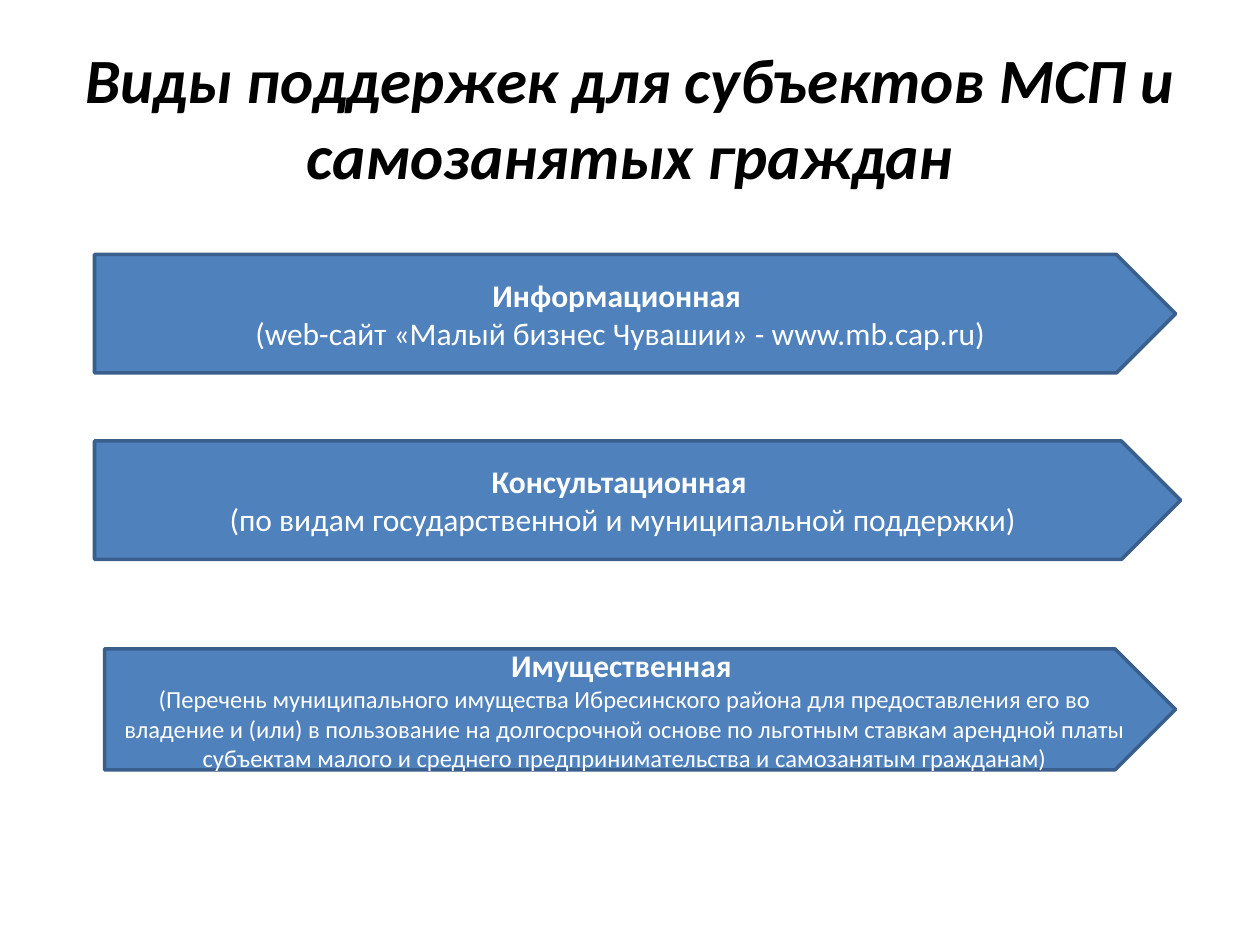
from dataclasses import dataclass

from pptx import Presentation
from pptx.dml.color import RGBColor
from pptx.enum.shapes import MSO_SHAPE
from pptx.enum.text import MSO_ANCHOR, PP_ALIGN
from pptx.text.text import TextFrame
from pptx.util import Emu, Pt

PX = 9144
FONT = "Calibri"
BLACK = RGBColor(0x00, 0x00, 0x00)
WHITE = RGBColor(0xFF, 0xFF, 0xFF)
BLUE = RGBColor(0x4F, 0x81, 0xBD)
NAVY = RGBColor(0x3A, 0x5F, 0x8C)
ARROW = MSO_SHAPE.PENTAGON
MIDDLE = MSO_ANCHOR.MIDDLE
CENTER = PP_ALIGN.CENTER


@dataclass(frozen=True)
class Box:
    left: int
    top: int
    width: int
    height: int

    def emu(self) -> list[Emu]:
        return [Emu(n * PX) for n in (self.left, self.top, self.width, self.height)]


@dataclass(frozen=True)
class Line:
    text: str
    size: int = 18
    bold: bool = False
    italic: bool = False


@dataclass(frozen=True)
class Banner:
    box: Box
    head: str
    note: str
    size: int = 18


TITLE = Line("Виды поддержек для субъектов МСП и самозанятых граждан", 36, True, True)
BANNERS = [
    Banner(Box(75, 202, 858, 94), "Информационная ",
           "(web-сайт «Малый бизнес Чувашии» - www.mb.cap.ru)"),
    Banner(Box(75, 350, 862, 94), "Консультационная ",
           "(по видам государственной и муниципальной поддержки)"),
    Banner(Box(83, 515, 850, 96), "Имущественная ",
           "(Перечень муниципального имущества Ибресинского района для "
           "предоставления его во владение и (или) в пользование на "
           "долгосрочной основе по льготным ставкам арендной платы субъектам "
           "малого и среднего предпринимательства и самозанятым гражданам)", 14),
]


def write(frame: TextFrame, lines: list[Line], color: RGBColor) -> None:
    frame.word_wrap = True
    frame.vertical_anchor = MIDDLE
    for i, line in enumerate(lines):
        para = frame.add_paragraph() if i else frame.paragraphs[0]
        para.alignment = CENTER
        run = para.add_run()
        run.text = line.text
        font = run.font
        font.name = FONT
        font.size = Pt(line.size)
        font.bold = line.bold
        font.italic = line.italic
        font.color.rgb = color


def draw(shapes, banner: Banner) -> None:
    shape = shapes.add_shape(ARROW, *banner.box.emu())
    shape.shadow.inherit = False
    shape.fill.solid()
    shape.fill.fore_color.rgb = BLUE
    shape.line.color.rgb = NAVY
    shape.line.width = Pt(2)
    lines = [Line(banner.head, bold=True), Line(banner.note, banner.size)]
    write(shape.text_frame, lines, WHITE)


def main() -> None:
    deck = Presentation()
    deck.slide_width = Emu(1000 * PX)
    deck.slide_height = Emu(750 * PX)
    shapes = deck.slides.add_slide(deck.slide_layouts[6]).shapes
    title = shapes.add_textbox(*Box(50, 30, 900, 125).emu())
    write(title.text_frame, [TITLE], BLACK)
    for banner in BANNERS:
        draw(shapes, banner)
    deck.save("out.pptx")


if __name__ == "__main__":
    main()
